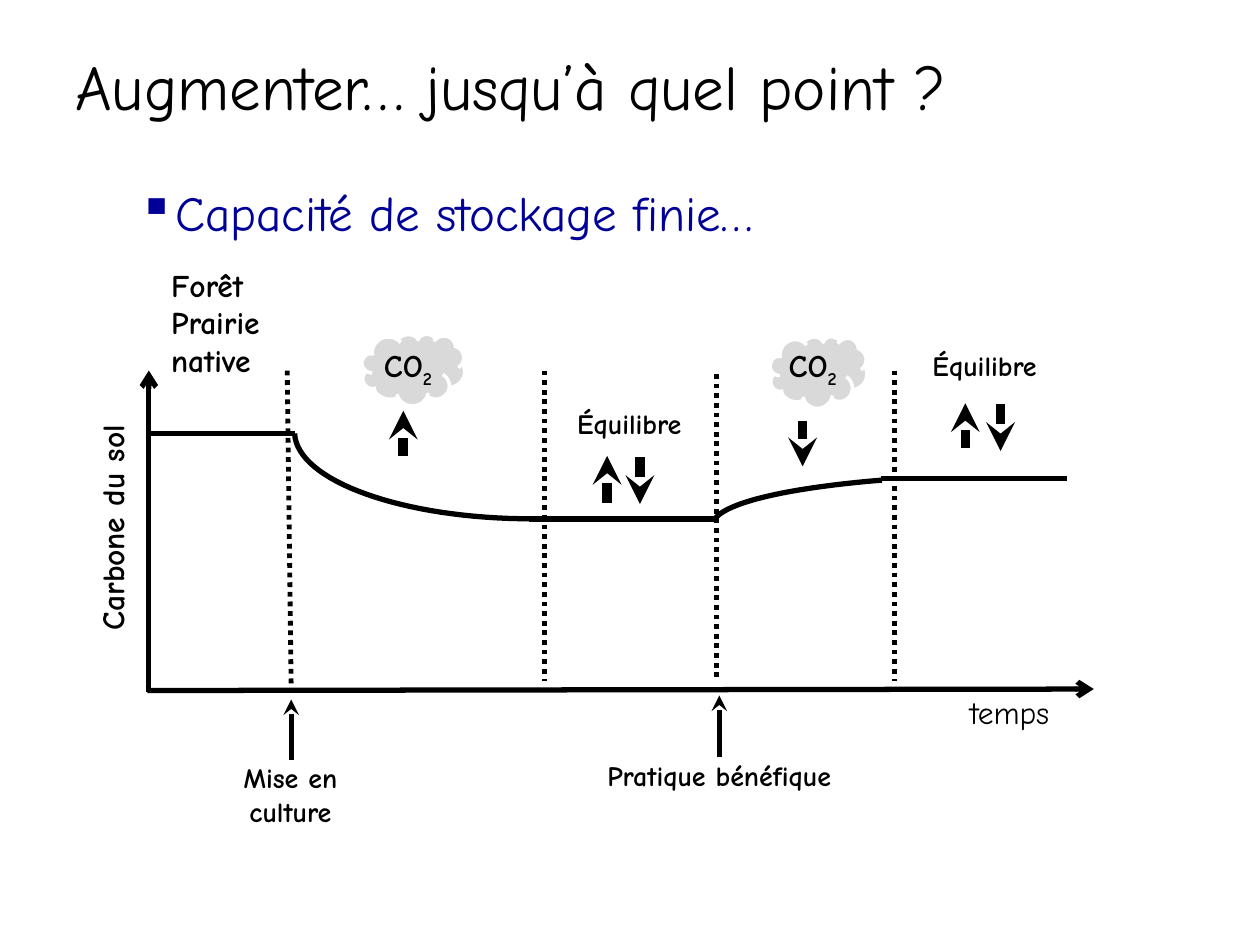
"""Build the slide on the finite storage capacity of soil carbon."""
from dataclasses import dataclass
from typing import NamedTuple, Optional

from lxml.etree import SubElement
from pptx import Presentation
from pptx.dml.color import RGBColor
from pptx.enum.dml import MSO_LINE_DASH_STYLE as Dash
from pptx.enum.shapes import MSO_CONNECTOR as Connector
from pptx.enum.shapes import MSO_SHAPE as Preset
from pptx.enum.text import MSO_ANCHOR as Anchor
from pptx.enum.text import PP_ALIGN as Align
from pptx.oxml.ns import qn
from pptx.util import Cm, Pt


@dataclass(frozen=True)
class Theme:
    font: str = "Comic Neue"
    ink: RGBColor = RGBColor(0, 0, 0)
    accent: RGBColor = RGBColor(0, 0, 0x99)
    cloud: RGBColor = RGBColor(0xD9, 0xD9, 0xD9)
    paper: RGBColor = RGBColor(0xFF, 0xFF, 0xFF)
    title: float = 36
    bullet: float = 28
    label: float = 18
    note: float = 16
    rule: float = 3
    divider: float = 2.75
    flux: float = 5.5
    outline: float = 2


class Box(NamedTuple):
    left: float
    top: float
    width: float
    height: float


class Point(NamedTuple):
    x: float
    y: float


class Segment(NamedTuple):
    start: Point
    end: Point


class Curve(NamedTuple):
    start: Point
    control_start: Point
    control_end: Point
    end: Point


class Cloud(NamedTuple):
    outline: Box
    label: Box


class Note(NamedTuple):
    text: str
    box: Box


THEME = Theme()
AXES = [
    Segment(Point(3, 13.94), Point(3, 7.47)),
    Segment(Point(2.97, 13.92), Point(22.05, 13.89)),
]
PLATEAUS = [
    Segment(Point(3, 8.74), Point(5.94, 8.74)),
    Segment(Point(10.67, 10.46), Point(14.45, 10.46)),
    Segment(Point(17.75, 9.65), Point(21.51, 9.65)),
]
CURVES = [
    Curve(Point(10.72, 10.46), Point(8.13, 10.46), Point(5.99, 9.7), Point(5.94, 8.74)),
    Curve(Point(17.78, 9.68), Point(15.95, 9.83), Point(14.71, 10.11), Point(14.43, 10.44)),
]
DIVIDERS = [
    Segment(Point(5.79, 7.47), Point(5.87, 13.89)),
    Segment(Point(10.97, 7.47), Point(10.97, 13.72)),
    Segment(Point(14.45, 7.54), Point(14.45, 13.74)),
    Segment(Point(18.03, 7.47), Point(18.03, 13.72)),
]
EVENTS = [
    Segment(Point(5.87, 15.32), Point(5.87, 14.1)),
    Segment(Point(14.5, 15.27), Point(14.5, 14.02)),
]
FLUXES = [
    Segment(Point(8.13, 9.2), Point(8.13, 8.28)),
    Segment(Point(12.24, 10.13), Point(12.24, 9.19)),
    Segment(Point(12.9, 9.22), Point(12.9, 10.16)),
    Segment(Point(16.18, 8.48), Point(16.18, 9.4)),
    Segment(Point(19.46, 9.04), Point(19.46, 8.13)),
    Segment(Point(20.17, 8.15), Point(20.17, 9.09)),
]
CLOUDS = [
    Cloud(Box(7.29, 6.71, 2.08, 1.47), Box(7.49, 6.86, 1.75, 1.02)),
    Cloud(Box(15.52, 6.76, 1.96, 1.47), Box(15.65, 6.86, 1.83, 1.02)),
]
NOTES = [
    Note("Mise en culture", Box(3.91, 15.21, 3.89, 0.94)),
    Note("Équilibre", Box(11.15, 8.08, 3.07, 0.94)),
    Note("Pratique bénéfique", Box(11.68, 15.16, 5.64, 0.94)),
    Note("Équilibre", Box(18.26, 6.91, 3.18, 0.94)),
]


def add_text(slide, text: str, box: Box, *, size: float = THEME.label,
             color: RGBColor = THEME.ink, bold: bool = False,
             align: Align = Align.LEFT, anchor: Anchor = Anchor.TOP,
             rotation: float = 0, subscript: str = "", bullet: str = "") -> None:
    shape = slide.shapes.add_textbox(*map(Cm, box))
    shape.rotation = rotation
    frame = shape.text_frame
    frame.word_wrap = True
    frame.vertical_anchor = anchor
    for index, content in enumerate(text.split("\n")):
        paragraph = frame.paragraphs[0] if index == 0 else frame.add_paragraph()
        paragraph.alignment = align
        if bullet:
            properties = paragraph._p.get_or_add_pPr()
            indent = Cm(0.74)
            properties.set("marL", str(indent))
            properties.set("indent", str(-indent))
            SubElement(properties, qn("a:buChar")).set("char", bullet)
        for part in filter(None, (content, subscript)):
            run = paragraph.add_run()
            run.text = part
            run.font.name = THEME.font
            run.font.size = Pt(size)
            run.font.bold = bold
            run.font.color.rgb = color
        if subscript:
            run._r.get_or_add_rPr().set("baseline", "-25000")


def add_line(slide, segment: Segment, *, width: float = THEME.rule,
             arrow: str = "", dash: Optional[Dash] = None) -> None:
    start, end = segment
    line = slide.shapes.add_connector(
        Connector.STRAIGHT, Cm(start.x), Cm(start.y), Cm(end.x), Cm(end.y))
    line.line.color.rgb = THEME.ink
    line.line.width = Pt(width)
    if dash is not None:
        line.line.dash_style = dash
    if arrow:
        SubElement(line.line._get_or_add_ln(), qn("a:tailEnd")).set("type", arrow)
    SubElement(line._element.spPr, qn("a:effectLst"))


def add_curve(slide, curve: Curve, steps: int = 32) -> None:
    def at(share: float) -> tuple[int, int]:
        rest = 1 - share
        weights = (rest ** 3, 3 * rest ** 2 * share, 3 * rest * share ** 2, share ** 3)
        return tuple(Cm(sum(weight * value for weight, value in zip(weights, axis)))
                     for axis in zip(*curve))

    builder = slide.shapes.build_freeform(*at(0))
    builder.add_line_segments([at(step / steps) for step in range(1, steps + 1)], close=False)
    shape = builder.convert_to_shape()
    shape.shadow.inherit = False
    shape.fill.background()
    shape.line.color.rgb = THEME.ink
    shape.line.width = Pt(THEME.rule)


def add_cloud(slide, cloud: Cloud) -> None:
    shape = slide.shapes.add_shape(Preset.CLOUD, *map(Cm, cloud.outline))
    shape.rotation = 5.6
    shape.shadow.inherit = False
    shape.fill.solid()
    shape.fill.fore_color.rgb = THEME.cloud
    shape.line.color.rgb = THEME.paper
    shape.line.width = Pt(THEME.outline)
    add_text(slide, "CO", cloud.label, bold=True, subscript="2")


def main() -> None:
    presentation = Presentation()
    presentation.slide_width, presentation.slide_height = Cm(25.4), Cm(19.05)
    slide = presentation.slides.add_slide(presentation.slide_layouts[6])
    for axis in AXES:
        add_line(slide, axis, arrow="arrow")
    for plateau in PLATEAUS:
        add_line(slide, plateau)
    for curve in CURVES:
        add_curve(slide, curve)
    for divider in DIVIDERS:
        add_line(slide, divider, width=THEME.divider, dash=Dash.ROUND_DOT)
    for event in EVENTS:
        add_line(slide, event, arrow="stealth")
    for flux in FLUXES:
        add_line(slide, flux, width=THEME.flux, arrow="stealth")
    for cloud in CLOUDS:
        add_cloud(slide, cloud)
    for note in NOTES:
        add_text(slide, note.text, note.box, size=THEME.note, bold=True, align=Align.CENTER)
    add_text(slide, "Augmenter… jusqu’à quel point ?", Box(1.27, 0.76, 22.86, 1.93),
             size=THEME.title, anchor=Anchor.MIDDLE)
    add_text(slide, "Capacité de stockage finie…", Box(2.54, 3.56, 14.73, 1.45),
             size=THEME.bullet, color=THEME.accent, bullet="▪")
    add_text(slide, "Forêt\nPrairie\nnative", Box(3.2, 5.23, 2.82, 2.57), bold=True)
    add_text(slide, "Carbone du sol", Box(-0.28, 9.91, 5.08, 1.02), bold=True, rotation=270)
    add_text(slide, "temps", Box(19.3, 13.84, 2.31, 1.02))
    presentation.save("out.pptx")


if __name__ == "__main__":
    main()
